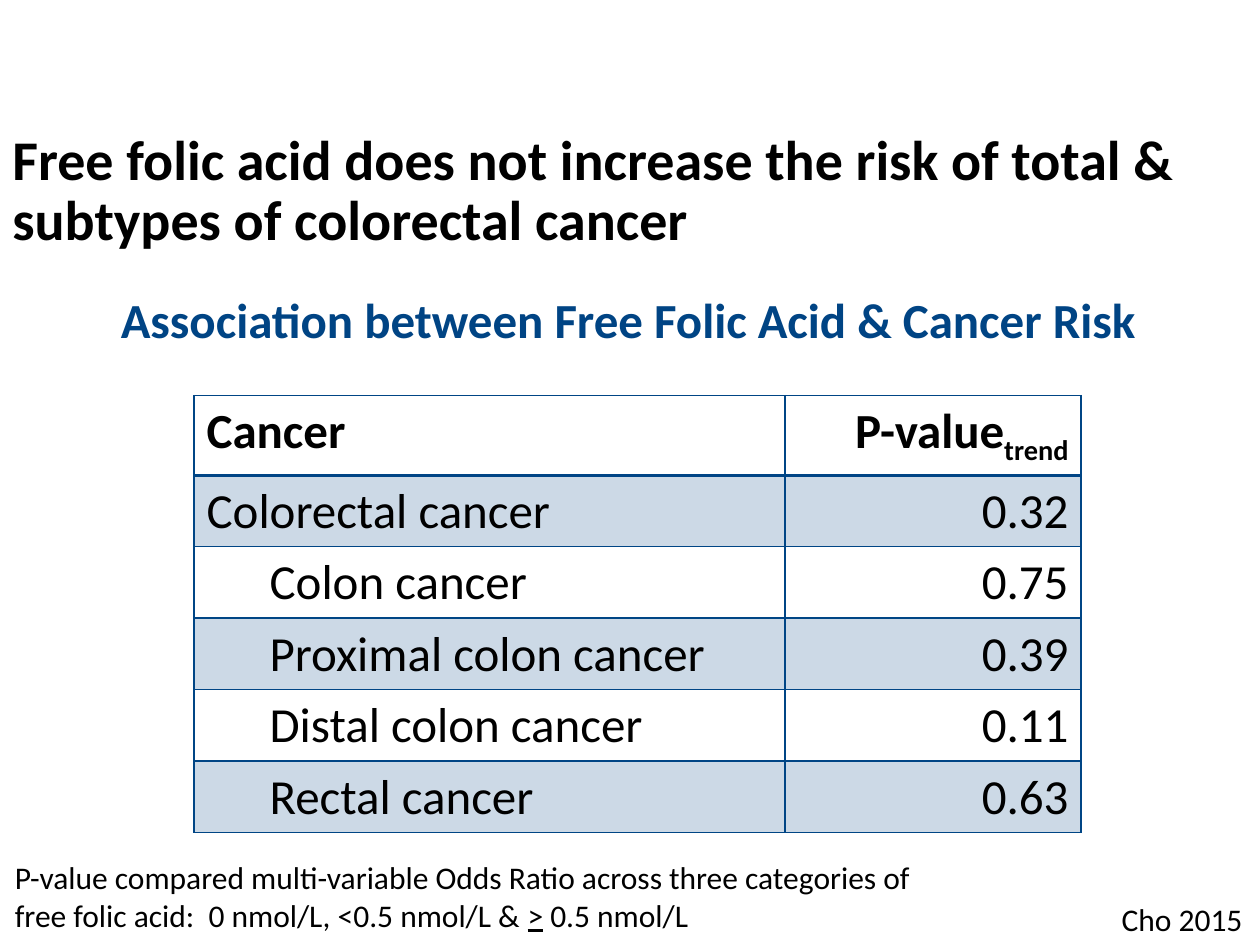
from dataclasses import dataclass

import pptx
import pptx.dml.color
import pptx.enum.text
import pptx.oxml
import pptx.oxml.ns
import pptx.util
from pptx.util import Inches

COLORS = {"text": "000000", "subtitle": "004484", "table": "004585"}
ALIGN = pptx.enum.text.PP_ALIGN
ANCHOR = pptx.enum.text.MSO_ANCHOR


@dataclass
class Piece:
    text: str
    underline: bool = False
    subscript: bool = False


@dataclass
class TextBlock:
    box: tuple[float, float, float, float]
    pieces: list[Piece]
    size: int
    color: str = "text"
    bold: bool = False
    align: int = ALIGN.LEFT
    anchor: int = ANCHOR.TOP
    line_spacing: float = 1.0


@dataclass
class RiskRow:
    cancer: str
    p_value: list[Piece]
    header: bool = False
    subtype: bool = False
    shaded: bool = False


BLOCKS = [
    TextBlock((0, 0.8, 10.07, 1.45),
              [Piece("Free folic acid does not increase the risk of total & subtypes of colorectal cancer")],
              32, bold=True, anchor=ANCHOR.MIDDLE, line_spacing=0.9),
    TextBlock((8.57, 7.09, 1.39, 0.4), [Piece("Cho 2015")], 18, align=ALIGN.RIGHT),
    TextBlock((0, 2.25, 9.97, 0.57), [Piece("Association between Free Folic Acid & Cancer Risk")],
              28, color="subtitle", bold=True, align=ALIGN.CENTER),
    TextBlock((0.02, 6.76, 7.44, 0.71),
              [Piece("P-value compared multi-variable Odds Ratio across three categories of "
                     "free folic acid:  0 nmol/L, <0.5 nmol/L & "),
               Piece(">", underline=True), Piece(" 0.5 nmol/L")], 18),
]

RISK_ROWS = [
    RiskRow("Cancer", [Piece("P-value"), Piece("trend", subscript=True)], header=True),
    RiskRow("Colorectal cancer", [Piece("0.32")], shaded=True),
    RiskRow("Colon cancer", [Piece("0.75")], subtype=True),
    RiskRow("Proximal colon cancer", [Piece("0.39")], subtype=True, shaded=True),
    RiskRow("Distal colon cancer", [Piece("0.11")], subtype=True),
    RiskRow("Rectal cancer", [Piece("0.63")], subtype=True, shaded=True),
]
COLUMN_WIDTHS = (4.69, 2.35)
HEADER_HEIGHT, ROW_HEIGHT = 0.63, 0.56


def rgb(name: str) -> pptx.dml.color.RGBColor:
    return pptx.dml.color.RGBColor.from_string(COLORS[name])


def write_pieces(paragraph, pieces: list[Piece], size: int, bold: bool, color: str) -> None:
    for piece in pieces:
        run = paragraph.add_run()
        run.text = piece.text
        font_format = {"name": "Calibri", "size": pptx.util.Pt(size),
                       "bold": bold, "underline": piece.underline}
        for attribute, value in font_format.items():
            setattr(run.font, attribute, value)
        run.font.color.rgb = rgb(color)
        if piece.subscript:
            run.font._element.set("baseline", "-25000")


def draw_block(slide, block: TextBlock) -> None:
    frame = slide.shapes.add_textbox(*map(Inches, block.box)).text_frame
    frame.word_wrap = True
    frame.vertical_anchor = block.anchor
    paragraph = frame.paragraphs[0]
    paragraph.alignment = block.align
    paragraph.line_spacing = block.line_spacing
    write_pieces(paragraph, block.pieces, block.size, block.bold, block.color)


def set_borders(cell, widths: dict[str, int]) -> None:
    properties = cell._tc.get_or_add_tcPr()
    for position, (side, width) in enumerate(widths.items()):
        border = pptx.oxml.parse_xml(
            f'<a:{side} {pptx.oxml.ns.nsdecls("a")} w="{pptx.util.Pt(width)}">'
            f'<a:solidFill><a:srgbClr val="{COLORS["table"]}"/></a:solidFill></a:{side}>')
        properties.insert(position, border)


def fill_cell(cell, shaded: bool) -> None:
    if not shaded:
        cell.fill.background()
        return
    cell.fill.solid()
    cell.fill.fore_color.rgb = rgb("table")
    color = cell._tc.tcPr.find(".//" + pptx.oxml.ns.qn("a:srgbClr"))
    color.append(pptx.oxml.parse_xml(f'<a:alpha {pptx.oxml.ns.nsdecls("a")} val="20000"/>'))


def draw_risk_table(slide, rows: list[RiskRow]) -> None:
    height = HEADER_HEIGHT + ROW_HEIGHT * (len(rows) - 1)
    table = slide.shapes.add_table(len(rows), len(COLUMN_WIDTHS), Inches(1.54), Inches(3.14),
                                   Inches(sum(COLUMN_WIDTHS)), Inches(height)).table
    table.horz_banding = False
    for column, width in zip(table.columns, COLUMN_WIDTHS):
        column.width = Inches(width)
    for index, row in enumerate(rows):
        table.rows[index].height = Inches(HEADER_HEIGHT if row.header else ROW_HEIGHT)
        contents = (([Piece(row.cancer)], ALIGN.LEFT), (row.p_value, ALIGN.RIGHT))
        for column, (pieces, align) in enumerate(contents):
            cell = table.cell(index, column)
            paragraph = cell.text_frame.paragraphs[0]
            paragraph.alignment = align
            if row.subtype and column == 0:
                paragraph.level = 1
                paragraph._p.get_or_add_pPr().set("marL", str(Inches(0.5)))
            write_pieces(paragraph, pieces, 28, row.header, "text")
            fill_cell(cell, row.shaded)
            set_borders(cell, {"lnL": 1, "lnR": 1, "lnT": 2 if index == 1 else 1,
                               "lnB": 2 if row.header else 1})


def main() -> None:
    presentation = pptx.Presentation()
    presentation.slide_width = Inches(10)
    presentation.slide_height = Inches(7.5)
    slide = presentation.slides.add_slide(presentation.slide_layouts[6])
    for block in BLOCKS:
        draw_block(slide, block)
    draw_risk_table(slide, RISK_ROWS)
    presentation.save("out.pptx")


if __name__ == "__main__":
    main()
